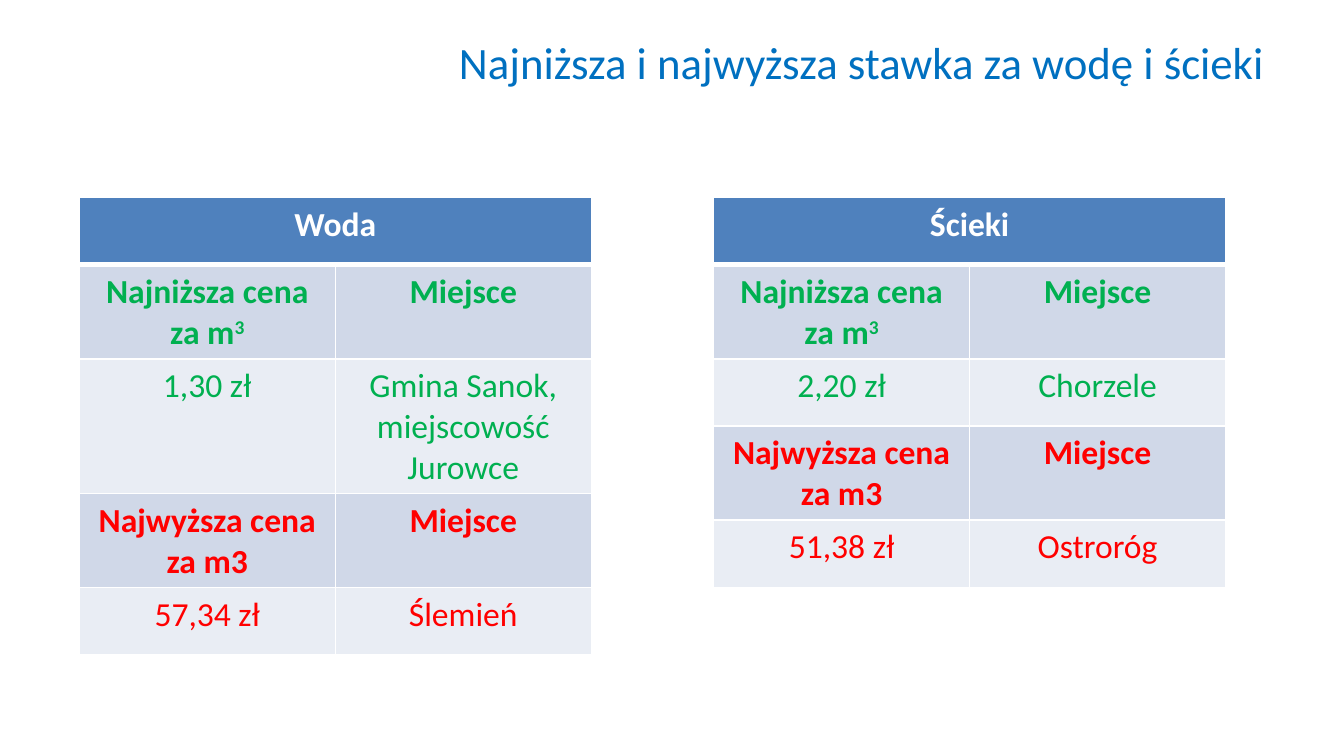
"""Build a slide with the lowest and highest water and sewage rates."""
from lxml import etree
from pptx import Presentation
from pptx.dml.color import RGBColor
from pptx.enum.text import PP_ALIGN
from pptx.oxml.ns import qn
from pptx.util import Inches, Pt

CENTER, RIGHT = PP_ALIGN.CENTER, PP_ALIGN.RIGHT
COLORS = {
    "title": "0070C0",
    "header": "4F81BD",
    "header_text": "FFFFFF",
    "border": "FFFFFF",
    "label_row": "D0D8E8",
    "value_row": "E9EDF4",
    "lowest": "00B050",
    "highest": "FF0000",
}
RATES = [
    ("Woda", 0.59, ("1,30 zł", "Gmina Sanok, miejscowość Jurowce"), ("57,34 zł", "Ślemień")),
    ("Ścieki", 5.31, ("2,20 zł", "Chorzele"), ("51,38 zł", "Ostroróg")),
]


def style_runs(paragraph, size, color, bold=False, align=CENTER):
    paragraph.alignment = align
    for run in paragraph.runs:
        run.font.name = "Calibri"
        run.font.size = Pt(size)
        run.font.bold = bold
        run.font.color.rgb = RGBColor.from_string(COLORS[color])


def fill_cell(cell, text, fill, color, bold, superscript=""):
    cell.fill.solid()
    cell.fill.fore_color.rgb = RGBColor.from_string(COLORS[fill])
    paragraph = cell.text_frame.paragraphs[0]
    paragraph.text = text
    if superscript:
        exponent = paragraph.add_run()
        exponent.text = superscript
        exponent._r.get_or_add_rPr().set("baseline", "30000")
    style_runs(paragraph, 18, color, bold)


prs = Presentation()
prs.slide_width = Inches(10)
prs.slide_height = Inches(10) * 9 // 16
slide = prs.slides.add_slide(prs.slide_layouts[6])

title = slide.shapes.add_textbox(Inches(2.87), Inches(0.21), Inches(6.63), Inches(0.46))
title.text_frame.word_wrap = True
heading = title.text_frame.paragraphs[0]
heading.text = "Najniższa i najwyższa stawka za wodę i ścieki"
style_runs(heading, 24, "title", align=RIGHT)

for service, left, lowest, highest in RATES:
    rates = slide.shapes.add_table(
        5, 2, Inches(left), Inches(1.47), Inches(3.81), Inches(2.5)
    ).table
    for row in range(5):
        for column in range(2):
            properties = rates.cell(row, column)._tc.get_or_add_tcPr()
            for side in ("L", "R", "T", "B"):
                thick = (row, side) in ((0, "B"), (1, "T"))
                border = etree.SubElement(properties, qn(f"a:ln{side}"), w=str(Pt(3 if thick else 1)))
                paint = etree.SubElement(border, qn("a:solidFill"))
                etree.SubElement(paint, qn("a:srgbClr"), val=COLORS["border"])
    rates.cell(0, 0).merge(rates.cell(0, 1))
    fill_cell(rates.cell(0, 0), service, "header", "header_text", True)
    sections = [
        (1, "Najniższa cena za m", "3", lowest, "lowest"),
        (3, "Najwyższa cena za m3", "", highest, "highest"),
    ]
    for row, label, exponent, (price, place), color in sections:
        fill_cell(rates.cell(row, 0), label, "label_row", color, True, exponent)
        fill_cell(rates.cell(row, 1), "Miejsce", "label_row", color, True)
        fill_cell(rates.cell(row + 1, 0), price, "value_row", color, False)
        fill_cell(rates.cell(row + 1, 1), place, "value_row", color, False)

prs.save("out.pptx")
